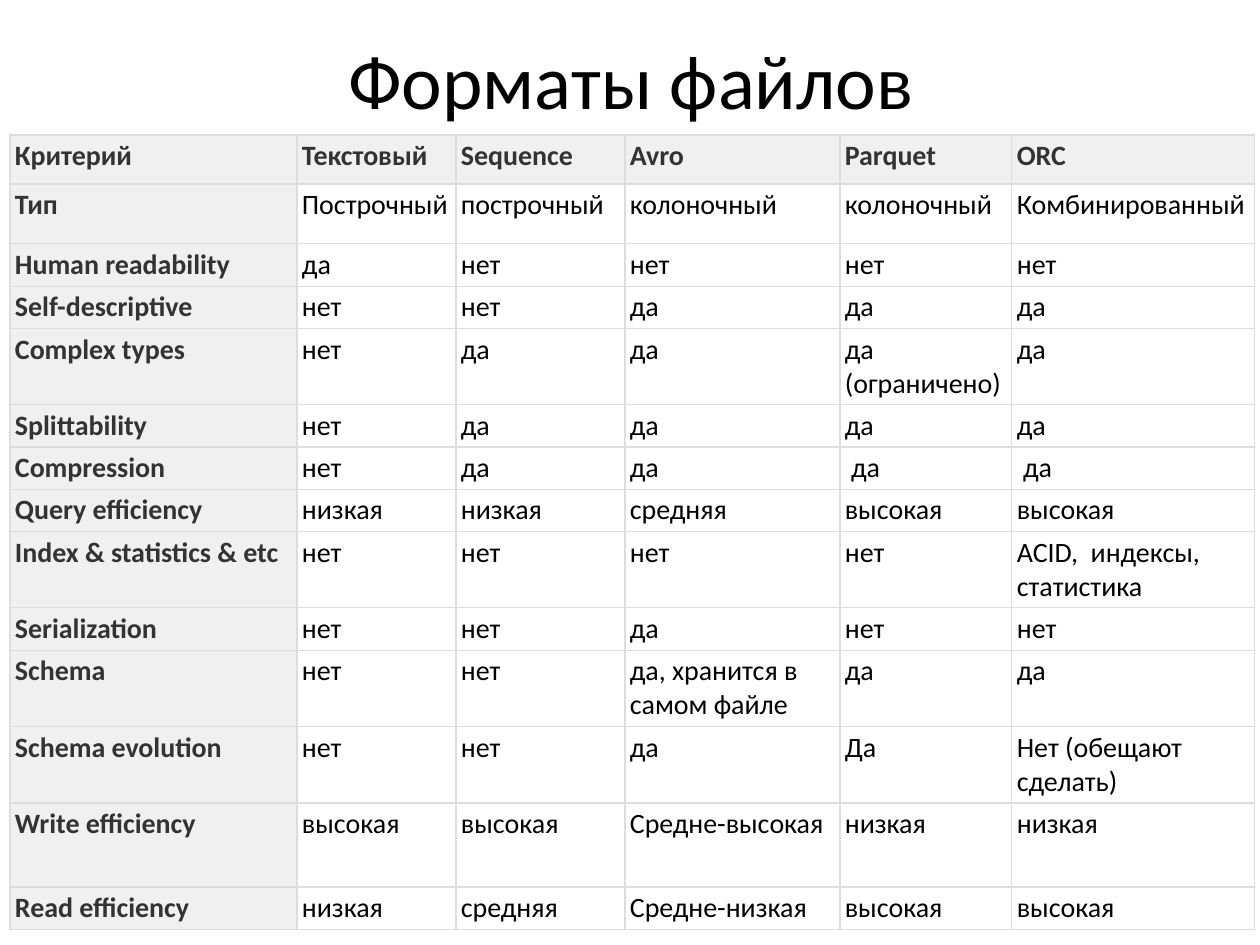
from lxml import etree
from pptx import Presentation
from pptx.dml.color import RGBColor
from pptx.enum.text import MSO_ANCHOR, PP_ALIGN
from pptx.oxml.ns import qn
from pptx.util import Pt

EMU_PER_PX = 914400 / 126
FONT = "Calibri"
MIDDLE = MSO_ANCHOR.MIDDLE
CENTER = PP_ALIGN.CENTER
TITLE_ONLY = 5
COLORS = {
    "text": "000000",
    "heading": "333333",
    "heading_fill": "F0F0F0",
    "value_fill": "FFFFFF",
    "border": "DDDDDD",
}

COLUMN_WIDTHS = [287, 159, 169, 215, 172, 243]
LINE_ROW = 42
TWO_LINE_ROW = 76
FORMATS = [
    (49, ["Критерий", "Текстовый", "Sequence", "Avro", "Parquet", "ORC"]),
    (60, ["Тип", "Построчный", "построчный", "колоночный", "колоночный", "Комбинированный"]),
    (LINE_ROW, ["Human readability", "да", "нет", "нет", "нет", "нет"]),
    (LINE_ROW, ["Self-descriptive", "нет", "нет", "да", "да", "да"]),
    (TWO_LINE_ROW, ["Complex types", "нет", "да", "да", "да\n(ограничено)", "да"]),
    (LINE_ROW, ["Splittability", "нет", "да", "да", "да", "да"]),
    (LINE_ROW, ["Compression", "нет", "да", "да", " да", " да"]),
    (LINE_ROW, ["Query efficiency", "низкая", "низкая", "средняя", "высокая", "высокая"]),
    (TWO_LINE_ROW, ["Index & statistics & etc", "нет", "нет", "нет", "нет",
                    "ACID,  индексы, статистика"]),
    (LINE_ROW, ["Serialization", "нет", "нет", "да", "нет", "нет"]),
    (TWO_LINE_ROW, ["Schema", "нет", "нет", "да, хранится в самом файле", "да", "да"]),
    (TWO_LINE_ROW, ["Schema evolution", "нет", "нет", "да", "Да", "Нет (обещают сделать)"]),
    (84, ["Write efficiency", "высокая", "высокая", "Средне-высокая", "низкая", "низкая"]),
    (LINE_ROW, ["Read efficiency", "низкая", "средняя", "Средне-низкая", "высокая", "высокая"]),
]


def px(length):
    """Turn pixels into EMU."""
    return round(length * EMU_PER_PX)


def color(name):
    """Look up a named colour."""
    return RGBColor.from_string(COLORS[name])


def style_paragraph(paragraph, size, color_name, bold=False):
    """Set the font of a whole paragraph."""
    font = paragraph.font
    font.name, font.size, font.bold = FONT, Pt(size), bold
    font.color.rgb = color(color_name)


def add_borders(cell):
    """Draw a thin line on each side of a cell."""
    properties = cell._tc.get_or_add_tcPr()
    for position, side in enumerate(("lnL", "lnR", "lnT", "lnB")):
        line = etree.Element(qn(f"a:{side}"), w=str(Pt(0.75)))
        fill = etree.SubElement(line, qn("a:solidFill"))
        etree.SubElement(fill, qn("a:srgbClr"), val=COLORS["border"])
        properties.insert(position, line)


def fill_cell(cell, text, is_header, is_heading):
    """Write and format one cell of the comparison."""
    cell.text = text
    cell.margin_left = px(5)
    cell.margin_right = px(9 if is_header else 5)
    cell.margin_top = cell.margin_bottom = px(4)
    cell.fill.solid()
    cell.fill.fore_color.rgb = color("heading_fill" if is_heading else "value_fill")
    for paragraph in cell.text_frame.paragraphs:
        style_paragraph(paragraph, 16, "heading" if is_heading else "text", is_heading)
    add_borders(cell)


def place_title(slide, left, top, width, height):
    """Place the slide title in its box."""
    title = slide.shapes.title
    title.left, title.top, title.width, title.height = map(px, (left, top, width, height))
    title.text_frame.text = "Форматы файлов"
    title.text_frame.vertical_anchor = MIDDLE
    heading = title.text_frame.paragraphs[0]
    heading.alignment = CENTER
    style_paragraph(heading, 44, "text")


def place_comparison(slide, left, top):
    """Place the table of file formats with its top left corner given."""
    width = sum(COLUMN_WIDTHS)
    height = sum(row_height for row_height, _ in FORMATS)
    comparison = slide.shapes.add_table(
        len(FORMATS), len(COLUMN_WIDTHS), px(left), px(top), px(width), px(height)
    ).table
    comparison.first_row = comparison.horz_banding = False
    for column, column_width in zip(comparison.columns, COLUMN_WIDTHS):
        column.width = px(column_width)
    for row_index, (row_height, texts) in enumerate(FORMATS):
        comparison.rows[row_index].height = px(row_height)
        for column_index, text in enumerate(texts):
            is_header = row_index == 0
            fill_cell(comparison.cell(row_index, column_index), text,
                      is_header, is_header or column_index == 0)


def main():
    """Build the slide and save it."""
    presentation = Presentation()
    presentation.slide_width, presentation.slide_height = px(1260), px(945)
    slide = presentation.slides.add_slide(presentation.slide_layouts[TITLE_ONLY])
    place_title(slide, 64, 0, 1134, 157)
    place_comparison(slide, 10, 135)
    presentation.save("out.pptx")


if __name__ == "__main__":
    main()
